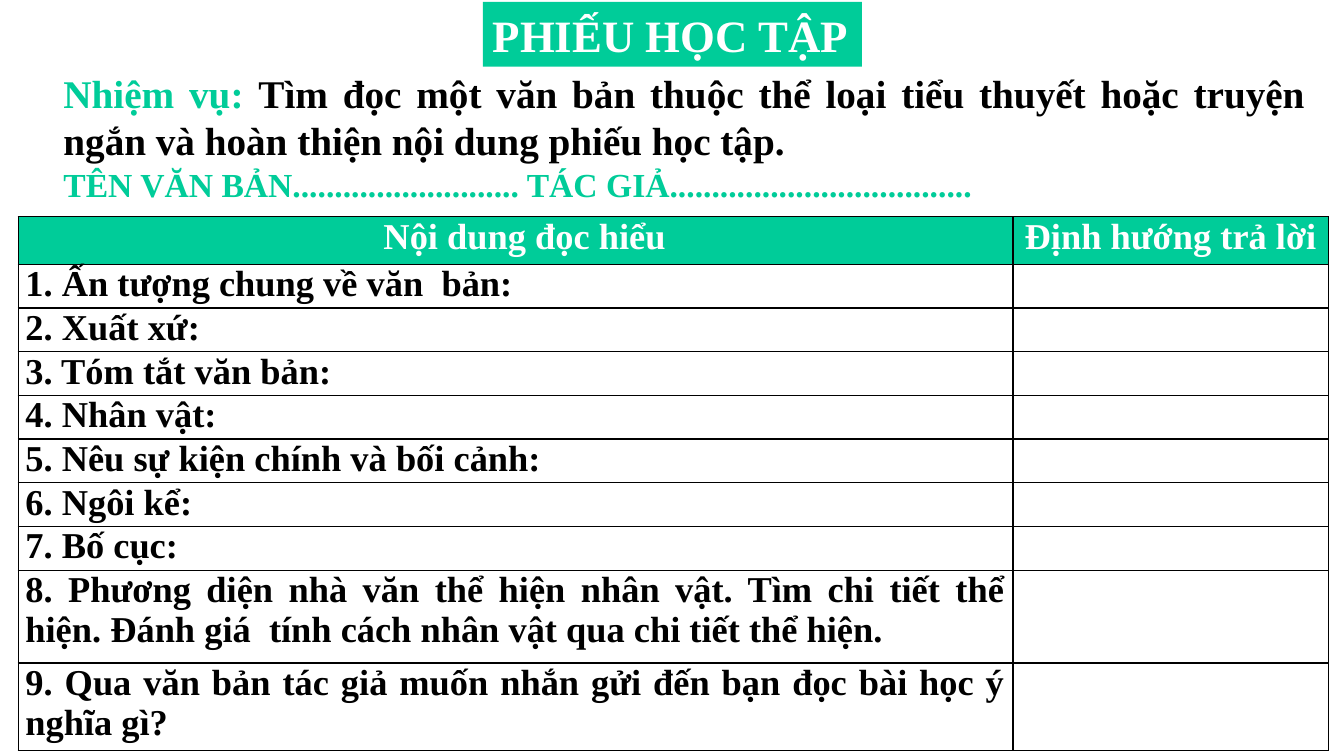
from lxml import etree
from pptx import Presentation
from pptx.dml.color import RGBColor
from pptx.enum.shapes import MSO_SHAPE
from pptx.enum.text import MSO_ANCHOR, PP_ALIGN
from pptx.oxml.ns import qn
from pptx.util import Cm, Pt

RECTANGLE = MSO_SHAPE.RECTANGLE
MIDDLE = MSO_ANCHOR.MIDDLE
CENTER, JUSTIFY = PP_ALIGN.CENTER, PP_ALIGN.JUSTIFY

FONT = "Times New Roman"
GREEN, WHITE, BLACK = "00CC99", "FFFFFF", "000000"

TITLE = "PHIẾU HỌC TẬP"
# Each paragraph: spans of (text, size, colour)
TASK = [
    [
        ("Nhiệm vụ: ", 28, GREEN),
        ("Tìm đọc một văn bản thuộc thể loại tiểu thuyết hoặc truyện ngắn "
         "và hoàn thiện nội dung phiếu học tập.", 28, BLACK),
    ],
    [("TÊN VĂN BẢN" + "." * 27 + " TÁC GIẢ" + "." * 36, 24, GREEN)],
]
HEADERS = ["Nội dung đọc hiểu", "Định hướng trả lời"]
QUESTIONS = [
    "1. Ấn tượng chung về văn  bản:",
    "2. Xuất xứ:",
    "3. Tóm tắt văn bản:",
    "4. Nhân vật:",
    "5. Nêu sự kiện chính và bối cảnh:",
    "6. Ngôi kể:",
    "7. Bố cục:",
    "8. Phương diện nhà văn thể hiện nhân vật. Tìm chi tiết thể hiện. "
    "Đánh giá  tính cách nhân vật qua chi tiết thể hiện.",
    "9. Qua văn bản tác giả muốn nhắn gửi đến bạn đọc bài học ý nghĩa gì?",
]
COLUMN_WIDTHS = [25.07, 7.95]
ROW_HEIGHTS = [1.2] + [1.1] * 7 + [2.34, 2.19]
TABLE_TEXT_SIZE = 26


def color(hex_code):
    return RGBColor.from_string(hex_code)


def add_span(para, text, size, hex_code):
    span = para.add_run()
    span.text = text
    span.font.name = FONT
    span.font.size = Pt(size)
    span.font.bold = True
    span.font.color.rgb = color(hex_code)


def add_borders(cell):
    """Draw a thin black line on all four sides of the cell."""
    properties = cell._tc.get_or_add_tcPr()
    for position, side in enumerate(("a:lnL", "a:lnR", "a:lnT", "a:lnB")):
        line = etree.Element(qn(side), w=str(Pt(1)))
        fill = etree.SubElement(line, qn("a:solidFill"))
        etree.SubElement(fill, qn("a:srgbClr"), val=BLACK)
        properties.insert(position, line)


def add_title(page):
    box = page.shapes.add_shape(RECTANGLE, Cm(12.17), Cm(0.05), Cm(9.55), Cm(1.63))
    box.shadow.inherit = False
    box.fill.solid()
    box.fill.fore_color.rgb = color(GREEN)
    box.line.fill.background()
    box.text_frame.word_wrap = True
    box.text_frame.vertical_anchor = MIDDLE
    para = box.text_frame.paragraphs[0]
    para.alignment = JUSTIFY
    add_span(para, TITLE, 32, WHITE)


def add_task(page):
    box = page.shapes.add_textbox(Cm(1.35), Cm(1.63), Cm(31.78), Cm(3.68))
    frame = box.text_frame
    frame.word_wrap = True
    for index, spans in enumerate(TASK):
        para = frame.add_paragraph() if index else frame.paragraphs[0]
        para.alignment = JUSTIFY
        for span in spans:
            add_span(para, *span)


def add_worksheet(page):
    rows = [HEADERS] + [[question, ""] for question in QUESTIONS]
    table = page.shapes.add_table(
        len(rows), len(HEADERS), Cm(0.46), Cm(5.46),
        Cm(sum(COLUMN_WIDTHS)), Cm(sum(ROW_HEIGHTS)),
    ).table
    table.horz_banding = False
    for column, width in zip(table.columns, COLUMN_WIDTHS):
        column.width = Cm(width)
    for row_index, (texts, height) in enumerate(zip(rows, ROW_HEIGHTS)):
        table.rows[row_index].height = Cm(height)
        is_header = row_index == 0
        for column_index, text in enumerate(texts):
            cell = table.cell(row_index, column_index)
            cell.margin_left = cell.margin_right = Cm(0.18)
            cell.margin_top = cell.margin_bottom = 0
            if is_header:
                cell.fill.solid()
                cell.fill.fore_color.rgb = color(GREEN)
            else:
                cell.fill.background()
            add_borders(cell)
            para = cell.text_frame.paragraphs[0]
            para.alignment = CENTER if is_header else JUSTIFY
            if text:
                add_span(para, text, TABLE_TEXT_SIZE, WHITE if is_header else BLACK)
    table.cell(0, 0).margin_left = Cm(0.64)


def main():
    deck = Presentation()
    deck.slide_width, deck.slide_height = Cm(33.87), Cm(19.05)
    page = deck.slides.add_slide(deck.slide_layouts[6])
    add_title(page)
    add_task(page)
    add_worksheet(page)
    deck.save("out.pptx")


if __name__ == "__main__":
    main()
